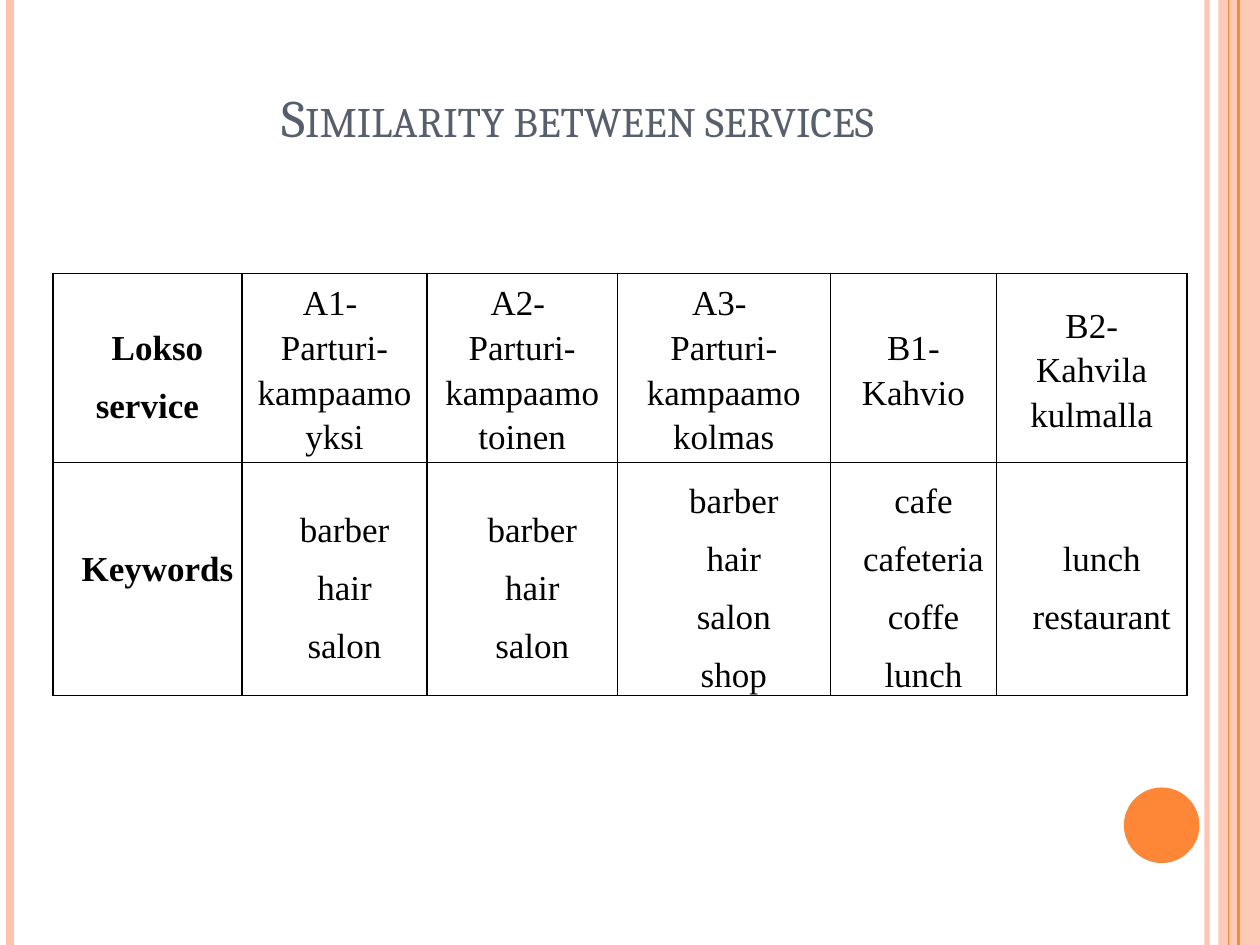
"""Build a slide with a table comparing the keywords of similar services."""
from dataclasses import dataclass

from lxml.etree import SubElement
from pptx import Presentation
from pptx.dml.color import RGBColor
from pptx.enum.shapes import MSO_CONNECTOR, MSO_SHAPE
from pptx.enum.text import MSO_ANCHOR, PP_ALIGN
from pptx.oxml import parse_xml
from pptx.oxml.ns import nsdecls, qn
from pptx.slide import Slide
from pptx.table import _Cell
from pptx.util import Inches, Pt

COLORS = {"peach": "FEC3AE", "orange": "FE8637", "title": "575F6D", "ink": "000000"}
HEIGHT = 7.5


@dataclass
class Stripe:
    x: float
    width: float
    color: str
    opacity: int = 100


@dataclass
class Block:
    kind: MSO_SHAPE
    box: tuple[float, float, float, float]
    color: str
    opacity: int = 100


@dataclass
class Entry:
    lines: list[str]
    spacing: float | Pt = 1.5
    indent: float = 0.16
    bold: bool = False


def service(code: str, name: str) -> Entry:
    """Return the heading entry of one service."""
    return Entry([code, name], spacing=1.15, indent=0)


STRIPES = [
    Stripe(9.58, 3, "peach", 93),
    Stripe(0.08, 4.5, "peach"),
    Stripe(9.83, 1.5, "orange"),
    Stripe(9.75, 0.75, "orange"),
]
BLOCKS = [
    Block(MSO_SHAPE.RECTANGLE, (9.67, 0, 0.33, HEIGHT), "peach", 87),
    Block(MSO_SHAPE.OVAL, (8.92, 6.25, 0.6, 0.6), "orange"),
]
COLUMN_WIDTHS = [1.5, 1.47, 1.51, 1.69, 1.32, 1.51]
ROW_HEIGHTS = [1.5, 1.61]
SALON = ["barber", "hair", "salon"]
ENTRIES = [
    [
        Entry(["Lokso service"], bold=True),
        service("A1- ", "Parturi-kampaamo yksi"),
        service("A2- ", "Parturi-kampaamo toinen"),
        service("A3- ", "Parturi-kampaamo kolmas"),
        service("B1-", "Kahvio"),
        service("B2-", "Kahvila kulmalla"),
    ],
    [
        Entry(["Keywords"], spacing=Pt(12), bold=True),
        Entry(SALON),
        Entry(SALON),
        Entry(SALON + ["shop"]),
        Entry(["cafe", "cafeteria", "coffe", "lunch"]),
        Entry(["lunch", "restaurant"]),
    ],
]


def rgb(name: str) -> RGBColor:
    """Return the named colour."""
    return RGBColor.from_string(COLORS[name])


def set_opacity(properties, percent: int) -> None:
    """Make the colours below an XML element partly transparent."""
    if percent < 100:
        for color in properties.iter(qn("a:srgbClr")):
            SubElement(color, qn("a:alpha")).set("val", str(percent * 1000))


def draw_stripe(slide: Slide, stripe: Stripe) -> None:
    """Draw a line over the full slide height."""
    x = Inches(stripe.x)
    line = slide.shapes.add_connector(MSO_CONNECTOR.STRAIGHT, x, 0, x, Inches(HEIGHT))
    line.line.color.rgb = rgb(stripe.color)
    line.line.width = Pt(stripe.width)
    properties = line._element.spPr
    set_opacity(properties, stripe.opacity)
    SubElement(properties, qn("a:effectLst"))


def draw_block(slide: Slide, block: Block) -> None:
    """Draw a plain filled shape."""
    shape = slide.shapes.add_shape(block.kind, *map(Inches, block.box))
    shape.shadow.inherit = False
    shape.fill.solid()
    shape.fill.fore_color.rgb = rgb(block.color)
    shape.line.fill.background()
    set_opacity(shape._element.spPr, block.opacity)


def format_title(slide: Slide, text: str) -> None:
    """Fill and place the title in small capitals."""
    title = slide.shapes.title
    title.left, title.top, title.width, title.height = map(Inches, (0.5, 0.3, 8.17, 1.25))
    title.text_frame.text = text
    title.text_frame.vertical_anchor = MSO_ANCHOR.MIDDLE
    heading = title.text_frame.paragraphs[0]
    heading.alignment = PP_ALIGN.CENTER
    font = heading.runs[0].font
    font.name, font.size, font.color.rgb = "Cambria", Pt(30), rgb("title")
    font._element.set("cap", "small")


def add_borders(cell: _Cell) -> None:
    """Give a cell a thin line on each side."""
    properties = cell._tc.get_or_add_tcPr()
    for position, side in enumerate("LRTB"):
        properties.insert(position, parse_xml(
            f'<a:ln{side} {nsdecls("a")} w="{Pt(1)}"><a:solidFill>'
            f'<a:srgbClr val="{COLORS["ink"]}"/></a:solidFill></a:ln{side}>'))


def fill_cell(cell: _Cell, entry: Entry) -> None:
    """Write an entry into a cell and format it."""
    cell.fill.background()
    add_borders(cell)
    cell.vertical_anchor = MSO_ANCHOR.MIDDLE
    cell.margin_left = cell.margin_right = cell.margin_top = cell.margin_bottom = 0
    cell.text_frame.text = "\n".join(entry.lines)
    for paragraph in cell.text_frame.paragraphs:
        paragraph.alignment = PP_ALIGN.CENTER
        paragraph.line_spacing = entry.spacing
        if entry.indent:
            paragraph._p.get_or_add_pPr().set("indent", str(Inches(entry.indent)))
        font = paragraph.runs[0].font
        font.name, font.size, font.bold = "Times New Roman", Pt(20), entry.bold
        font.color.rgb = rgb("ink")


def draw_services(slide: Slide) -> None:
    """Draw the table of services and keywords."""
    services = slide.shapes.add_table(
        len(ROW_HEIGHTS), len(COLUMN_WIDTHS), Inches(0.42), Inches(2.17),
        Inches(sum(COLUMN_WIDTHS)), Inches(sum(ROW_HEIGHTS))).table
    services.first_row = services.horz_banding = False
    for column, width in zip(services.columns, COLUMN_WIDTHS):
        column.width = Inches(width)
    for row, height, entries in zip(services.rows, ROW_HEIGHTS, ENTRIES):
        row.height = Inches(height)
        for cell, entry in zip(row.cells, entries):
            fill_cell(cell, entry)


def main() -> None:
    """Build and save the slide."""
    deck = Presentation()
    deck.slide_width, deck.slide_height = Inches(10), Inches(HEIGHT)
    slide = deck.slides.add_slide(deck.slide_layouts[5])
    for block in BLOCKS:
        draw_block(slide, block)
    for stripe in STRIPES:
        draw_stripe(slide, stripe)
    format_title(slide, "Similarity between services")
    draw_services(slide)
    deck.save("out.pptx")


if __name__ == "__main__":
    main()
